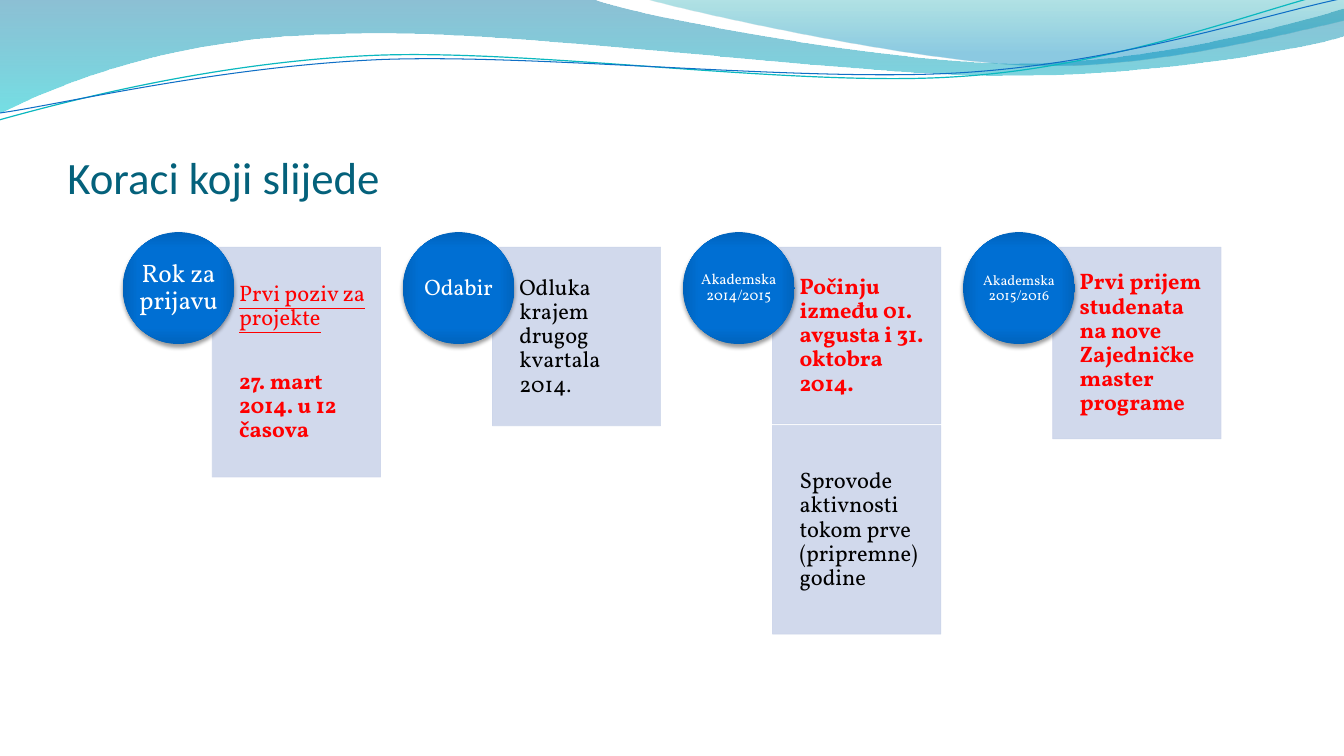
from dataclasses import dataclass
from math import cos, radians, sin

from pptx import Presentation
from pptx import util as u
from pptx.dml.color import RGBColor
from pptx.enum import shapes, text
from pptx.oxml import parse_xml
from pptx.oxml.ns import nsdecls, qn


@dataclass(frozen=True)
class Theme:
    heading_font: str = "Calibri"
    body_font: str = "Vollkorn"
    heading: str = "04617B"
    card: str = "CCD5EA"
    plain: str = "000000"
    accent: str = "FF0000"
    badge_text: str = "FFFFFF"
    shadow: str = "000000"
    teal_line: str = "0AB8BF"
    blue_line: str = "0F6FC6"
    heading_size: float = 32
    body_size: float = 16
    stop_size: float = 14
    # Gradient stops: position %, colour, opacity %
    wide_wave: tuple = ((0, "0074A1", 45), (100, "00C6CF", 55))
    right_wave: tuple = ((0, "00A1A9", 30), (80, "008BBF", 45))
    badge: tuple = ((0, "0070D5", 100), (71, "006FD3", 100), (100, "0063BC", 100))


DOWN = '<a:lin ang="5400000" scaled="0"/>'
CENTRE = ('<a:path path="rect"><a:fillToRect l="50000" t="50000" '
          'r="50000" b="50000"/></a:path>')
TILT = 357.3

# Waves: a start point, then line ends (2 numbers) or Bezier curves (6), in inches
WIDE_WAVE = [
    (0, 0), (5.87, -0.01),
    (6.34, 0.17, 8.85, 0.63, 10.11, 0.63), (11.38, 0.63, 12.78, 0.26, 13.33, 0.09),
    (13.35, 0.36),
    (13.11, 0.44, 11.6, 0.76, 9.94, 0.75), (8.29, 0.75, 5.09, 0.28, 3.43, 0.34),
    (1.72, 0.36, 0.61, 0.83, -0.01, 1.13), (0, 0),
]
RIGHT_WAVE = [
    (6.39, -0.01),
    (6.79, 0.11, 9.09, 0.62, 10.25, 0.65), (11.41, 0.69, 12.82, 0.32, 13.33, 0.21),
    (13.33, 0), (6.39, -0.01),
]
TEAL_WAVE = [
    (-0.01, 1.19),
    (0.64, 1.01, 2.11, 0.62, 3.69, 0.55), (5.27, 0.48, 7.9, 0.87, 9.5, 0.76),
    (11.1, 0.66, 12.52, 0.08, 13.31, -0.1),
]
BLUE_WAVE = [
    (0, 1.12),
    (0.63, 1.03, 2.18, 0.66, 3.78, 0.59), (5.37, 0.53, 7.96, 0.82, 9.55, 0.72),
    (11.15, 0.62, 12.55, 0.14, 13.34, -0.02),
]


def local_points(step, tilt):
    """Points of a step in thousandths of a centimetre, before the shape is tilted."""
    c, s = cos(radians(-tilt)), sin(radians(-tilt))
    cx, cy = (6.65, 0.58) if tilt else (0, 0)
    rel = [(x - cx, y - cy) for x, y in zip(step[::2], step[1::2])]
    return [(round(2540 * (cx + x * c - y * s)), round(2540 * (cy + x * s + y * c)))
            for x, y in rel]


class Deck:
    def __init__(self, theme):
        self.theme = theme
        self.prs = Presentation()
        self.prs.slide_width, self.prs.slide_height = u.Cm(33.87), u.Cm(19.05)
        self.s = self.prs.slides.add_slide(self.prs.slide_layouts[6])

    def gradient(self, sp, stops, direction):
        sp.fill.background()
        gs = "".join(
            f'<a:gs pos="{pos * 1000}"><a:srgbClr val="{color}">'
            f'<a:alpha val="{alpha * 1000}"/></a:srgbClr></a:gs>'
            for pos, color, alpha in stops)
        grad = parse_xml(f'<a:gradFill {nsdecls("a")} rotWithShape="1">'
                         f'<a:gsLst>{gs}</a:gsLst>{direction}</a:gradFill>')
        spPr = sp._element.spPr
        spPr.replace(spPr.find(qn("a:noFill")), grad)

    def outline(self, steps, close, tilt=0):
        """Build a freeform on the step ends, then bend its segments into curves."""
        curves = [local_points(step, tilt) for step in steps]
        ends = [pts[-1] for pts in curves]
        fb = self.s.shapes.build_freeform(*ends[0], scale=u.Cm(1) / 1000)
        fb.add_line_segments(ends[1:], close=close)
        sp = fb.convert_to_shape()
        left, top = (min(values) for values in zip(*ends))
        for seg, pts in zip(list(sp._element.iter(qn("a:lnTo"))), curves[1:]):
            if len(pts) == 3:
                xml = "".join(f'<a:pt x="{x - left}" y="{y - top}"/>' for x, y in pts)
                seg.getparent().replace(seg, parse_xml(
                    f'<a:cubicBezTo {nsdecls("a")}>{xml}</a:cubicBezTo>'))
        sp.rotation = tilt
        sp.shadow.inherit = False
        return sp

    def wave(self, steps, stops):
        sp = self.outline(steps, close=True)
        self.gradient(sp, stops, DOWN)
        sp.line.fill.background()

    def wave_line(self, steps, color, width):
        sp = self.outline(steps, close=False, tilt=TILT)
        sp.fill.background()
        sp.line.color.rgb = RGBColor.from_string(color)
        sp.line.width = u.Pt(width)

    def frame(self, sp, anchor, left=0, top=0, right=0, bottom=0):
        tf = sp.text_frame
        tf.word_wrap = True
        tf.vertical_anchor = anchor
        tf.margin_left, tf.margin_top = u.Cm(left), u.Cm(top)
        tf.margin_right, tf.margin_bottom = u.Cm(right), u.Cm(bottom)
        return tf

    def style(self, r, font, size, color, bold=False, underline=False):
        r.font.name, r.font.size = font, u.Pt(size)
        r.font.color.rgb = RGBColor.from_string(color)
        r.font.bold, r.font.underline = bold, underline

    def title(self, words):
        sp = self.s.shapes.add_textbox(u.Cm(1.7), u.Cm(1.96), u.Cm(30.48), u.Cm(3.18))
        tf = self.frame(sp, text.MSO_ANCHOR.BOTTOM, top=0.13)
        tf.text = words
        th = self.theme
        self.style(tf.paragraphs[0].runs[0], th.heading_font, th.heading_size, th.heading)

    def card(self, x, y, h, paragraphs):
        """Each paragraph is a list of (words, style changes) runs."""
        th = self.theme
        sp = self.s.shapes.add_shape(shapes.MSO_SHAPE.RECTANGLE,
                                     u.Cm(x), u.Cm(y), u.Cm(4.24), u.Cm(h))
        sp.shadow.inherit = False
        sp.line.width = u.Pt(0.5)
        for fill in (sp.fill, sp.line.fill):
            fill.solid()
            fill.fore_color.rgb = RGBColor.from_string(th.card)
        for clr in sp._element.spPr.iter(qn("a:srgbClr")):
            clr.append(parse_xml(f'<a:alpha {nsdecls("a")} val="90000"/>'))
        tf = self.frame(sp, text.MSO_ANCHOR.MIDDLE, 0.68, 0.3, 0.3, 0.3)
        for i, runs in enumerate(paragraphs):
            p = tf.add_paragraph() if i else tf.paragraphs[0]
            p.alignment, p.line_spacing = text.PP_ALIGN.LEFT, 0.9
            if i < len(paragraphs) - 1:
                p.space_after = u.Pt(28.5)
            for words, changes in runs:
                r = p.add_run()
                r.text = words
                self.style(r, **{"font": th.body_font, "size": th.body_size,
                                 "color": th.plain, **changes})

    def badge(self, x, y, words, size):
        th = self.theme
        sp = self.s.shapes.add_shape(shapes.MSO_SHAPE.OVAL,
                                     u.Cm(x), u.Cm(y), u.Cm(2.82), u.Cm(2.82))
        self.gradient(sp, th.badge, CENTRE)
        sp.line.fill.background()
        sp.shadow.inherit = False
        sp._element.spPr.find(qn("a:effectLst")).append(parse_xml(
            f'<a:outerShdw {nsdecls("a")} blurRad="{u.Pt(3.1)}" dist="{u.Pt(2)}" '
            f'dir="5400000" rotWithShape="0"><a:srgbClr val="{th.shadow}">'
            '<a:alpha val="38000"/></a:srgbClr></a:outerShdw>'))
        tf = self.frame(sp, text.MSO_ANCHOR.MIDDLE)
        tf.text = words
        p = tf.paragraphs[0]
        p.alignment, p.line_spacing = text.PP_ALIGN.CENTER, 0.9
        self.style(p.runs[0], th.body_font, size, th.badge_text)


def main():
    th = Theme()
    deck = Deck(th)
    deck.wave(WIDE_WAVE, th.wide_wave)
    deck.wave(RIGHT_WAVE, th.right_wave)
    deck.wave_line(TEAL_WAVE, th.teal_line, 0.85)
    deck.wave_line(BLUE_WAVE, th.blue_line, 0.75)
    deck.title("Koraci koji slijede")
    strong = {"color": th.accent, "bold": True}
    link = {"color": th.accent, "underline": True}
    # Badge words, badge size, then cards as (height, paragraphs)
    steps = [
        ("Rok za prijavu", 18, [(5.79, [[("Prvi poziv za projekte", link)],
                                        [("27. mart 2014. u 12 časova", strong)]])]),
        ("Odabir", 16, [(4.5, [[("Odluka krajem drugog kvartala 2014", {}),
                                (".", {"size": th.stop_size})]])]),
        ("Akademska 2014/2015", 10.5, [
            (4.45, [[("Počinju između 01. avgusta i 31. oktobra 2014.", strong)]]),
            (5.26, [[("Sprovode aktivnosti tokom prve (pripremne) godine", {})]])]),
        ("Akademska 2015/2016", 10, [
            (4.83, [[("Prvi prijem studenata na nove Zajedničke master programe", strong)]])]),
    ]
    for i, (name, size, cards) in enumerate(steps):
        x, y = 5.35 + 7.06 * i, 6.23
        for h, paragraphs in cards:
            deck.card(x, y, h, paragraphs)
            y += h + 0.04
        deck.badge(x - 2.26, 5.85, name, size)
    deck.prs.save("out.pptx")


if __name__ == "__main__":
    main()
